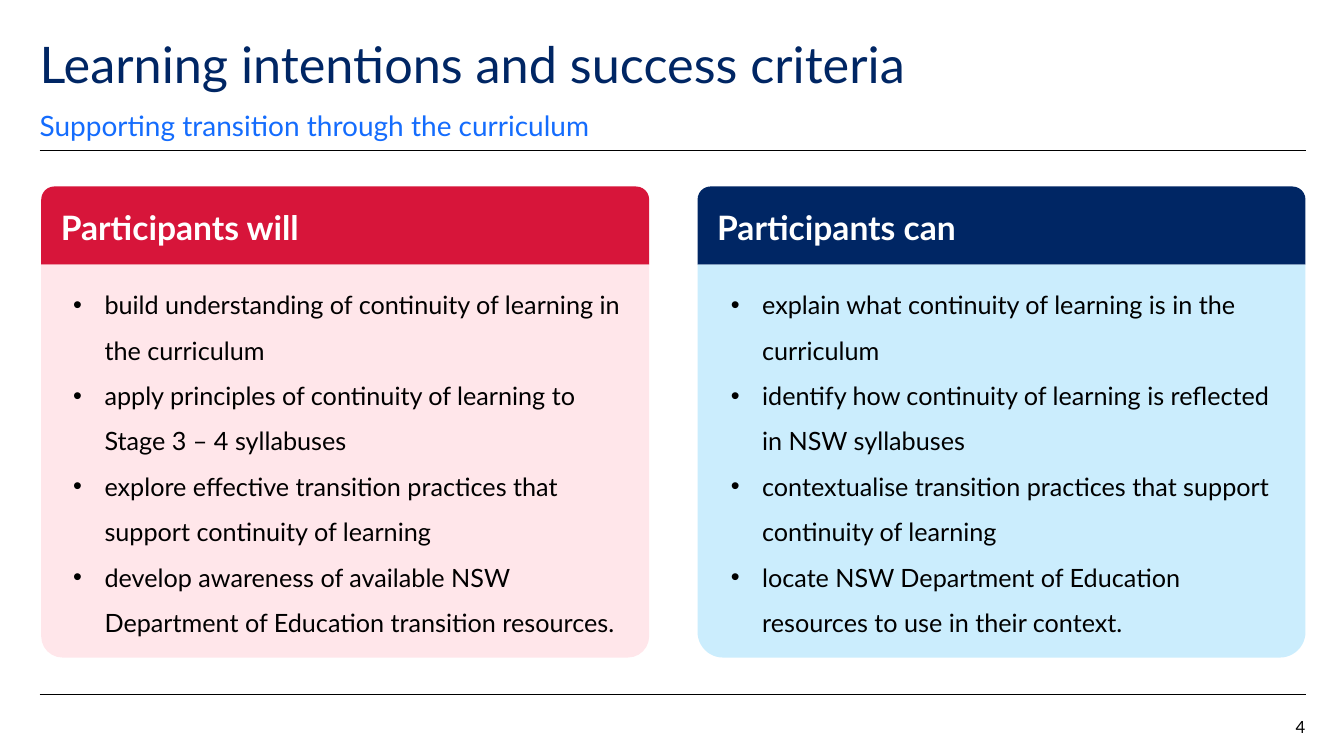
from lxml import etree
from pptx import Presentation
from pptx.dml.color import RGBColor
from pptx.enum.shapes import MSO_CONNECTOR, MSO_SHAPE
from pptx.enum.text import MSO_ANCHOR, MSO_AUTO_SIZE, PP_ALIGN
from pptx.oxml.ns import qn
from pptx.util import Cm, Pt

TOP, MIDDLE, BOTTOM = MSO_ANCHOR.TOP, MSO_ANCHOR.MIDDLE, MSO_ANCHOR.BOTTOM
LEFT, RIGHT = PP_ALIGN.LEFT, PP_ALIGN.RIGHT
NO_FIT = MSO_AUTO_SIZE.NONE
LINE = MSO_CONNECTOR.STRAIGHT
ROUND_TOP = MSO_SHAPE.ROUND_2_SAME_RECTANGLE

NAVY = RGBColor(0x00, 0x26, 0x64)
BLUE = RGBColor(0x14, 0x6C, 0xFD)
SKY = RGBColor(0xCB, 0xED, 0xFD)
RED = RGBColor(0xD7, 0x15, 0x3A)
PINK = RGBColor(0xFF, 0xE6, 0xEA)
WHITE = RGBColor(0xFF, 0xFF, 0xFF)
BLACK = RGBColor(0x00, 0x00, 0x00)

FONT = "Lato"
EDGE, END = 1, 32.9
CARD_LEFT, CARD_TOP, CARD_WIDE, CARD_HIGH = 1.04, 4.7, 15.32, 11.87
CARD_STEP = 16.54
HEAD_HIGH = 1.97

CARDS = [
    ("Participants will", RED, PINK, 0.054, [
        "build understanding of continuity of learning in the curriculum",
        "apply principles of continuity of learning to Stage 3 – 4 syllabuses",
        "explore effective transition practices that support continuity of learning",
        "develop awareness of available NSW Department of Education transition resources.",
    ]),
    ("Participants can", NAVY, SKY, 0.065, [
        "explain what continuity of learning is in the curriculum",
        "identify how continuity of learning is reflected in NSW syllabuses",
        "contextualise transition practices that support continuity of learning",
        "locate NSW Department of Education resources to use in their context.",
    ]),
]


def write(shape, text, size, color, anchor=TOP, pads=(0, 0, 0, 0),
          align=LEFT, space=1.0, bold=False):
    """Fill a shape with evenly styled text; pads run left, top, right, bottom."""
    frame = shape.text_frame
    frame.text = text
    frame.word_wrap = True
    frame.auto_size = NO_FIT
    frame.vertical_anchor = anchor
    (frame.margin_left, frame.margin_top,
     frame.margin_right, frame.margin_bottom) = map(Cm, pads)
    for para in frame.paragraphs:
        para.alignment = align
        para.line_spacing = space
        para.space_before = Pt(0)
        for run in para.runs:
            font = run.font
            font.name, font.size, font.bold = FONT, Pt(size), bold
            font.color.rgb = color


def add_bullet(para):
    """Give a paragraph a hanging round bullet."""
    props = para._p.get_or_add_pPr()
    props.set("marL", str(Cm(0.79)))
    props.set("indent", str(-Cm(0.79)))
    etree.SubElement(props, qn("a:buFont")).set("typeface", "Arial")
    etree.SubElement(props, qn("a:buChar")).set("char", "•")


def add_rule(slide, top):
    """Draw a thin line between the page margins."""
    rule = slide.shapes.add_connector(LINE, Cm(EDGE), Cm(top), Cm(END), Cm(top))
    rule.line.color.rgb = BLACK
    rule.line.width = Pt(0.5)
    etree.SubElement(rule._element.spPr, qn("a:effectLst"))


def add_panel(slide, left, top, wide, high, color, curves):
    """Add a flat panel with the given top and bottom corner curves."""
    panel = slide.shapes.add_shape(ROUND_TOP, Cm(left), Cm(top), Cm(wide), Cm(high))
    panel.adjustments[0], panel.adjustments[1] = curves
    panel.shadow.inherit = False
    panel.fill.solid()
    panel.fill.fore_color.rgb = color
    panel.line.fill.background()
    return panel


def add_card(slide, left, top, wide, high, card):
    """Stack a heading panel on a panel of bullet points."""
    title, dark, light, curve, points = card
    head = add_panel(slide, left, top, wide, HEAD_HIGH, dark, (0.167, 0))
    write(head, title, 24, WHITE, MIDDLE, (0.4, 0.3, 0.3, 0.3), bold=True)
    body = add_panel(slide, left, top + HEAD_HIGH, wide, high - HEAD_HIGH,
                     light, (0, curve))
    write(body, "\n".join(points), 18, BLACK, TOP, (0.65, 0.25, 0.2, 0.2), space=1.5)
    for para in body.text_frame.paragraphs:
        add_bullet(para)


def add_header(slide, left, top, wide):
    """Place the title, the subtitle and the line below them."""
    title = slide.shapes.title
    title.left, title.top = Cm(left), Cm(top)
    title.width, title.height = Cm(wide), Cm(1.52)
    write(title, "Learning intentions and success criteria", 36, NAVY, space=0.9)
    label = slide.shapes.add_textbox(Cm(left), Cm(top + 1.72), Cm(wide), Cm(0.86))
    write(label, "Supporting transition through the curriculum", 20, BLUE,
          BOTTOM, space=1.4)
    add_rule(slide, top + 2.8)


def add_footer(slide, top):
    """Place the lower line and the page number."""
    add_rule(slide, top)
    wide = 2
    page = slide.shapes.add_textbox(Cm(END - wide), Cm(top + 0.61), Cm(wide), Cm(0.51))
    write(page, "4", 12, BLACK, align=RIGHT, space=0.9)


def main():
    """Build and save the slide."""
    deck = Presentation()
    deck.slide_width, deck.slide_height = Cm(33.87), Cm(19.05)
    slide = deck.slides.add_slide(deck.slide_layouts[5])
    add_header(slide, EDGE, 1, 28)
    for i, card in enumerate(CARDS):
        add_card(slide, CARD_LEFT + i * CARD_STEP, CARD_TOP, CARD_WIDE, CARD_HIGH, card)
    add_footer(slide, 17.5)
    deck.save("out.pptx")


if __name__ == "__main__":
    main()
